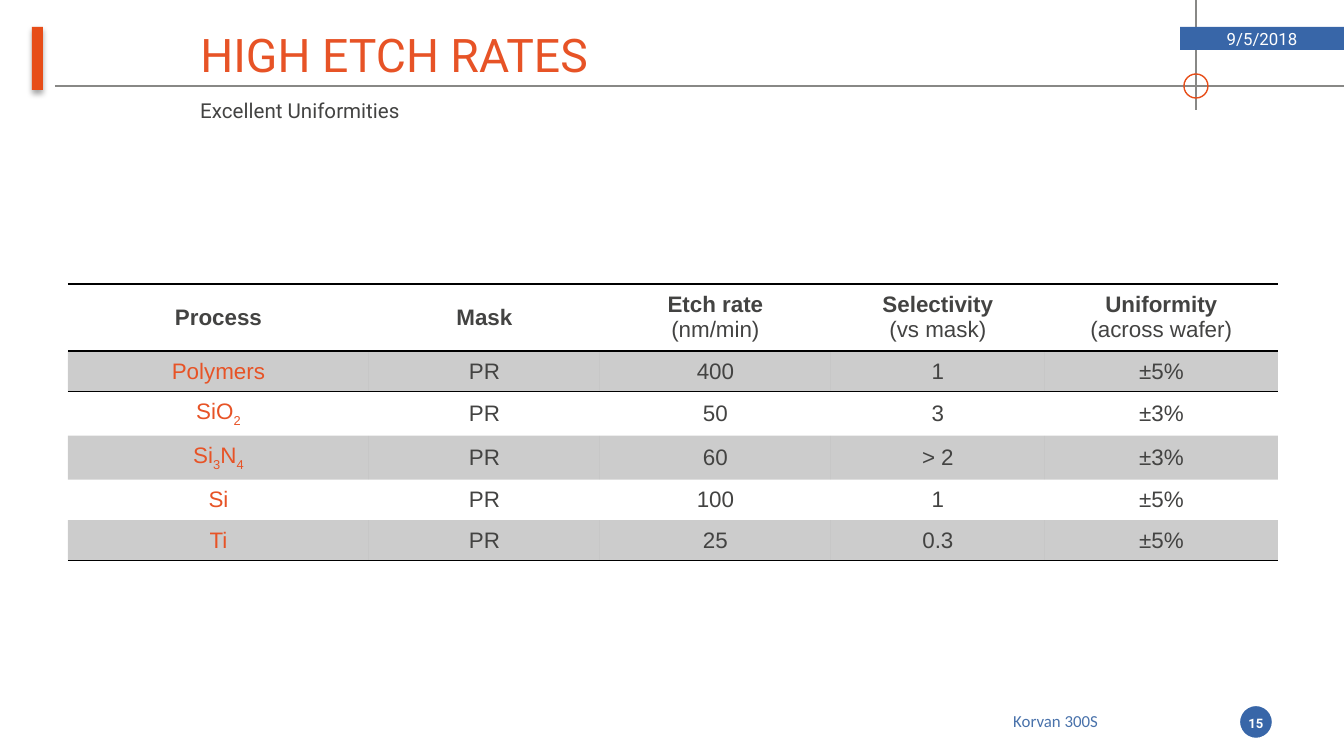
from dataclasses import dataclass
from itertools import groupby

from lxml import etree
from pptx import Presentation
from pptx.dml.color import RGBColor
from pptx.enum.shapes import MSO_CONNECTOR, MSO_SHAPE
from pptx.enum.text import MSO_ANCHOR, MSO_AUTO_SIZE, PP_ALIGN
from pptx.oxml import parse_xml
from pptx.oxml.ns import nsdecls, qn
from pptx.util import Pt

EMU_PER_PX = 914400 / 134.4
NO_TABLE_STYLE = "{2D5ABB26-0587-4C30-8999-92F81FD0307C}"


def px(length):
    return round(length * EMU_PER_PX)


def rgb(color):
    return RGBColor.from_string(color)


@dataclass(frozen=True)
class Theme:
    accent: str = "E74D18"
    heading: str = "E75326"
    blue: str = "3866A8"
    footer: str = "4972AB"
    ink: str = "434342"
    rule: str = "888886"
    black: str = "000000"
    white: str = "FFFFFF"
    display_font: str = "Roboto"
    footer_font: str = "Calibri"
    table_font: str = "Arial"
    title_size: float = 24.8
    subtitle_size: float = 11
    table_size: float = 12
    label_size: float = 9
    number_size: float = 7


class SlideBuilder:
    def __init__(self, slide, theme):
        self.slide = slide
        self.theme = theme

    def add_run(self, paragraph, text, size, color, font, bold=False, subscript=False):
        run = paragraph.add_run()
        run.text = text
        run.font.size = Pt(size)
        run.font.name = font
        run.font.bold = bold
        run.font.color.rgb = rgb(color)
        if subscript:
            run.font._element.set("baseline", "-25000")

    def line(self, x1, y1, x2, y2):
        rule = self.slide.shapes.add_connector(
            MSO_CONNECTOR.STRAIGHT, px(x1), px(y1), px(x2), px(y2))
        rule.line.color.rgb = rgb(self.theme.rule)
        rule.line.width = Pt(0.75)
        etree.SubElement(rule._element.spPr, qn("a:effectLst"))

    def shape(self, kind, box, fill=None, line=None, width=0.75):
        shape = self.slide.shapes.add_shape(kind, *map(px, box))
        shape.shadow.inherit = False
        if fill:
            shape.fill.solid()
            shape.fill.fore_color.rgb = rgb(fill)
        else:
            shape.fill.background()
        if line:
            shape.line.color.rgb = rgb(line)
            shape.line.width = Pt(width)
        else:
            shape.line.fill.background()
        return shape

    def soft_shadow(self, shape):
        effects = shape._element.spPr.find(qn("a:effectLst"))
        effects.append(parse_xml(
            f'<a:outerShdw {nsdecls("a")} blurRad="{Pt(3.1)}" dist="{Pt(1.8)}" '
            f'dir="5400000" rotWithShape="0"><a:srgbClr val="{self.theme.black}">'
            '<a:alpha val="35000"/></a:srgbClr></a:outerShdw>'))

    def label(self, shape, text, size, color, font, bold=False):
        frame = shape.text_frame
        frame.word_wrap = True
        frame.vertical_anchor = MSO_ANCHOR.MIDDLE
        frame.margin_left = frame.margin_right = frame.margin_top = frame.margin_bottom = 0
        paragraph = frame.paragraphs[0]
        paragraph.alignment = PP_ALIGN.CENTER
        self.add_run(paragraph, text, size, color, font, bold)

    def text_box(self, box):
        shape = self.slide.shapes.add_textbox(*map(px, box))
        shape.text_frame.word_wrap = True
        return shape

    def title(self, box, text):
        title = self.slide.shapes.title
        title.left, title.top, title.width, title.height = map(px, box)
        frame = title.text_frame
        frame.auto_size = MSO_AUTO_SIZE.NONE
        frame.vertical_anchor = MSO_ANCHOR.MIDDLE
        paragraph = frame.paragraphs[0]
        paragraph.alignment = PP_ALIGN.LEFT
        self.add_run(paragraph, text, self.theme.title_size, self.theme.heading,
                     self.theme.display_font)

    def cell(self, cell, paragraphs, shaded, edges):
        """Each paragraph is a list of (text, color, bold, subscript) runs."""
        cell.vertical_anchor = MSO_ANCHOR.MIDDLE
        frame = cell.text_frame
        for i, runs in enumerate(paragraphs):
            paragraph = frame.add_paragraph() if i else frame.paragraphs[0]
            paragraph.alignment = PP_ALIGN.CENTER
            for text, color, bold, subscript in runs:
                self.add_run(paragraph, text, self.theme.table_size, color,
                             self.theme.table_font, bold, subscript)
        properties = cell._tc.get_or_add_tcPr()
        if shaded:
            cell.fill.solid()
            cell.fill.fore_color.rgb = rgb(self.theme.black)
            tint = properties.find(".//" + qn("a:srgbClr"))
            etree.SubElement(tint, qn("a:alpha")).set("val", "20000")
        else:
            cell.fill.background()
        # Borders come before the fill, top before bottom
        for edge in reversed(edges):
            properties.insert(0, parse_xml(
                f'<a:ln{edge} {nsdecls("a")} w="{Pt(1)}"><a:solidFill>'
                f'<a:srgbClr val="{self.theme.black}"/></a:solidFill></a:ln{edge}>'))

    def table(self, left, top, column_widths, row_heights, headers, rows):
        theme = self.theme
        frame = self.slide.shapes.add_table(
            len(row_heights), len(column_widths), px(left), px(top),
            px(sum(column_widths)), px(sum(row_heights)))
        table = frame.table
        table.first_row = table.horz_banding = False
        table._tbl.tblPr.find(qn("a:tableStyleId")).text = NO_TABLE_STYLE
        for column, width in zip(table.columns, column_widths):
            column.width = px(width)
        for row, height in zip(table.rows, row_heights):
            row.height = px(height)

        for c, (name, *unit) in enumerate(headers):
            lines = [[(name, theme.ink, True, False)]]
            lines += [[(text, theme.ink, False, False)] for text in unit]
            self.cell(table.cell(0, c), lines, False, "TB")

        edges = {1: "T", len(rows): "B"}
        for r, (process, *values) in enumerate(rows, 1):
            # Digits in a chemical formula are subscripts
            formula = [("".join(part), theme.heading, False, is_digit)
                       for is_digit, part in groupby(process, str.isdigit)]
            plain = [[(value, theme.ink, False, False)] for value in values]
            for c, runs in enumerate([formula, *plain]):
                self.cell(table.cell(r, c), [runs], r % 2 == 1, edges.get(r, ""))


def main():
    theme = Theme()
    deck = Presentation()
    deck.slide_width, deck.slide_height = px(1344), px(756)
    builder = SlideBuilder(deck.slides.add_slide(deck.slide_layouts[5]), theme)

    # Header rules and accents
    builder.line(55, 86, 1344, 86)
    builder.line(1196, 110, 1196, 0)
    builder.shape(MSO_SHAPE.OVAL, (1184, 74, 24, 24), line=theme.accent)
    accent_bar = builder.shape(MSO_SHAPE.RECTANGLE, (32, 27, 11, 63), theme.accent)
    builder.soft_shadow(accent_bar)

    # Title and subtitle
    builder.title((187, 19, 993, 70), "HIGH ETCH RATES")
    subtitle = builder.text_box((187, 91, 371, 38))
    builder.add_run(subtitle.text_frame.paragraphs[0], "Excellent Uniformities",
                    theme.subtitle_size, theme.ink, theme.display_font)

    # Date
    date = builder.shape(MSO_SHAPE.RECTANGLE, (1180, 27, 164, 23), theme.blue)
    builder.label(date, "9/5/2018", theme.label_size, theme.white, theme.display_font)

    # Footer and page number
    footer = builder.shape(MSO_SHAPE.RECTANGLE, (915, 704, 281, 34), theme.white)
    builder.label(footer, "Korvan 300S", theme.label_size, theme.footer, theme.footer_font)
    builder.shape(MSO_SHAPE.OVAL, (1238, 704, 36, 36), theme.blue, theme.white, 2.25)
    page_number = builder.text_box((1234, 704, 44, 38))
    builder.label(page_number, "15", theme.number_size, theme.white,
                  theme.display_font, bold=True)

    # Etch results
    headers = [("Process",), ("Mask",), ("Etch rate", "(nm/min)"),
               ("Selectivity", "(vs mask)"), ("Uniformity", "(across wafer)")]
    results = [("Polymers", "PR", "400", "1", "±5%"),
               ("SiO2", "PR", "50", "3", "±3%"),
               ("Si3N4", "PR", "60", "> 2", "±3%"),
               ("Si", "PR", "100", "1", "±5%"),
               ("Ti", "PR", "25", "0.3", "±5%")]
    builder.table(68, 284, [301, 231, 231, 214, 233], [52] + [35] * len(results),
                  headers, results)

    deck.save("out.pptx")


if __name__ == "__main__":
    main()
